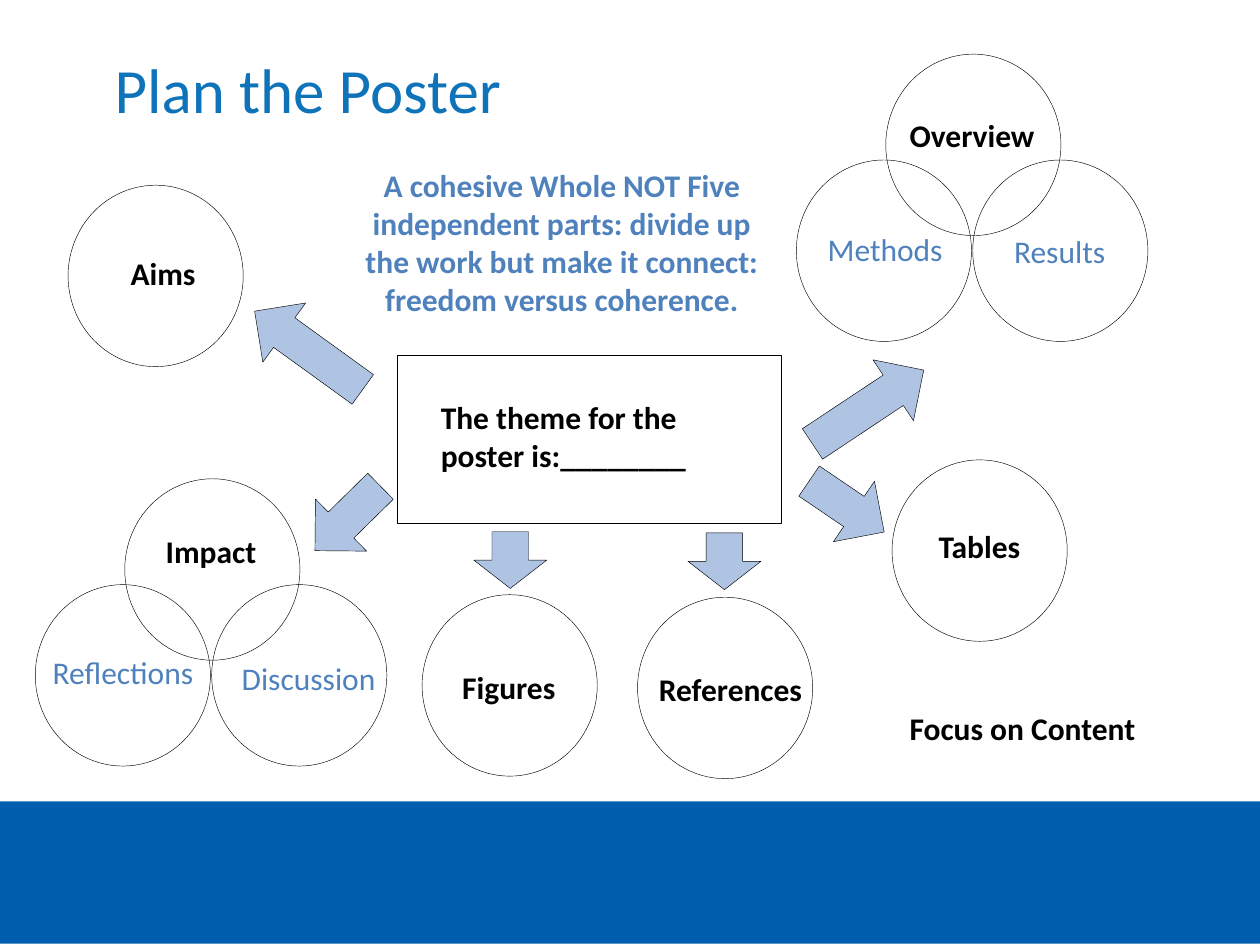
from lxml import etree
from pptx import Presentation
from pptx.dml.color import RGBColor
from pptx.enum.shapes import MSO_SHAPE
from pptx.enum.text import MSO_ANCHOR, MSO_AUTO_SIZE, PP_ALIGN
from pptx.util import Inches, Pt

RECT, OVAL, ARROW = MSO_SHAPE.RECTANGLE, MSO_SHAPE.OVAL, MSO_SHAPE.DOWN_ARROW
LEFT, CENTER = PP_ALIGN.LEFT, PP_ALIGN.CENTER
BOTTOM = MSO_ANCHOR.BOTTOM
NO_FIT, GROW = MSO_AUTO_SIZE.NONE, MSO_AUTO_SIZE.SHAPE_TO_FIT_TEXT

THEME = {
    "font": "Calibri",
    "title_size": Pt(36),
    "text_size": Pt(18),
    "line_width": Pt(0.25),
    "title": RGBColor(0x0E, 0x73, 0xB9),
    "ink": RGBColor(0, 0, 0),
    "accent": RGBColor(0x4F, 0x81, 0xBD),
    "arrow": RGBColor(0xAF, 0xC4, 0xE3),
    "band": RGBColor(0x00, 0x5E, 0xAE),
}

prs = Presentation()
prs.slide_width, prs.slide_height = Inches(10), Inches(7.5)
COL, ROW = prs.slide_width / 100, prs.slide_height / 75
s = prs.slides.add_slide(prs.slide_layouts[5])


def add_shape(kind, x, y, w, h, fill=None, line=True, rotation=0):
    sp = s.shapes.add_shape(kind, int(x * COL), int(y * ROW), int(w * COL), int(h * ROW))
    sp.shadow.inherit = False
    sp.rotation = rotation
    if fill is None:
        sp.fill.background()
    else:
        sp.fill.solid()
        sp.fill.fore_color.rgb = fill
    if line:
        sp.line.color.rgb = THEME["ink"]
        sp.line.width = THEME["line_width"]
    else:
        sp.line.fill.background()


def add_text(text, x, y, w, h=4, color="ink", bold=True, align=LEFT, wrap=True):
    sp = s.shapes.add_textbox(int(x * COL), int(y * ROW), int(w * COL), int(h * ROW))
    tf = sp.text_frame
    tf.word_wrap = wrap
    tf.auto_size = GROW
    tf.text = text
    p = tf.paragraphs[0]
    p.alignment = align
    r = p.runs[0]
    r.font.name, r.font.size = THEME["font"], THEME["text_size"]
    r.font.bold = bold
    r.font.color.rgb = THEME[color]


add_shape(RECT, 0, 63.6, 100, 11.3, THEME["band"], line=False)

title = s.shapes.title
title.left, title.top = int(9.1 * COL), int(3.9 * ROW)
title.width, title.height = int(82 * COL), int(6.1 * ROW)
tf = title.text_frame
tf.text = "Plan the Poster"
tf.margin_left = tf.margin_right = tf.margin_top = tf.margin_bottom = 0
tf.vertical_anchor = BOTTOM
tf.auto_size = NO_FIT
p = tf.paragraphs[0]
p.alignment = LEFT
r = p.runs[0]
r.font.name, r.font.size = THEME["font"], THEME["title_size"]
r.font.color.rgb = THEME["title"]

add_shape(RECT, 31.5, 28.2, 30.5, 13.3)
add_text("The theme for the poster is:________", 34, 31.1, 26, 7.1)

CIRCLE_W, CIRCLE_H = 13.9, 14.4
singles = [(5.4, 14.7), (33.5, 47.2), (50.6, 47.4), (70.8, 36.5)]
trio_tops = [(70.3, 4.3), (9.9, 38)]
trios = [(x + dx, y + dy) for x, y in trio_tops
         for dx, dy in ((0, 0), (-7.1, 8.4), (6.9, 8.4))]
for x, y in singles + trios:
    add_shape(OVAL, x, y, CIRCLE_W, CIRCLE_H)

for text, x, y in [("Aims", 1.6, 19.7), ("Overview", 65.8, 8.7), ("Impact", 5.4, 41.7)]:
    add_text(text, x, y, 22.7, align=CENTER)

for text, x, y, w in [("Figures", 35.7, 52.5, 9.5), ("References", 51.3, 52.7, 13.5),
                      ("Tables", 73.5, 41.3, 8.5)]:
    add_text(text, x, y, w, wrap=False)

for text, x, y, w in [("Methods", 64.7, 17.8, 11.2), ("Results", 79.5, 17.9, 9.3),
                      ("Reflections", 3.2, 51.3, 13.3), ("Discussion", 18.2, 51.8, 12.7)]:
    add_text(text, x, y, w, color="accent", bold=False, wrap=False)

for x, y, length, rotation in [(21.6, 22.5, 10.6, 125.9), (24.7, 37.5, 7.3, 45.5),
                               (66, 27, 10.6, 236.4), (64.3, 36.6, 7.2, 304.2),
                               (37.6, 42.2, 4.5, 0), (54.6, 42.3, 4.5, 0)]:
    add_shape(ARROW, x, y, 5.8, length, THEME["arrow"], rotation=rotation)

add_text("A cohesive Whole NOT Five independent parts: divide up the work but make it "
         "connect: freedom versus coherence.", 26.8, 12.7, 35.6, 13.1,
         color="accent", align=CENTER)
add_text("Focus on Content", 71.2, 55.8, 23.5)

prs.save("out.pptx")
